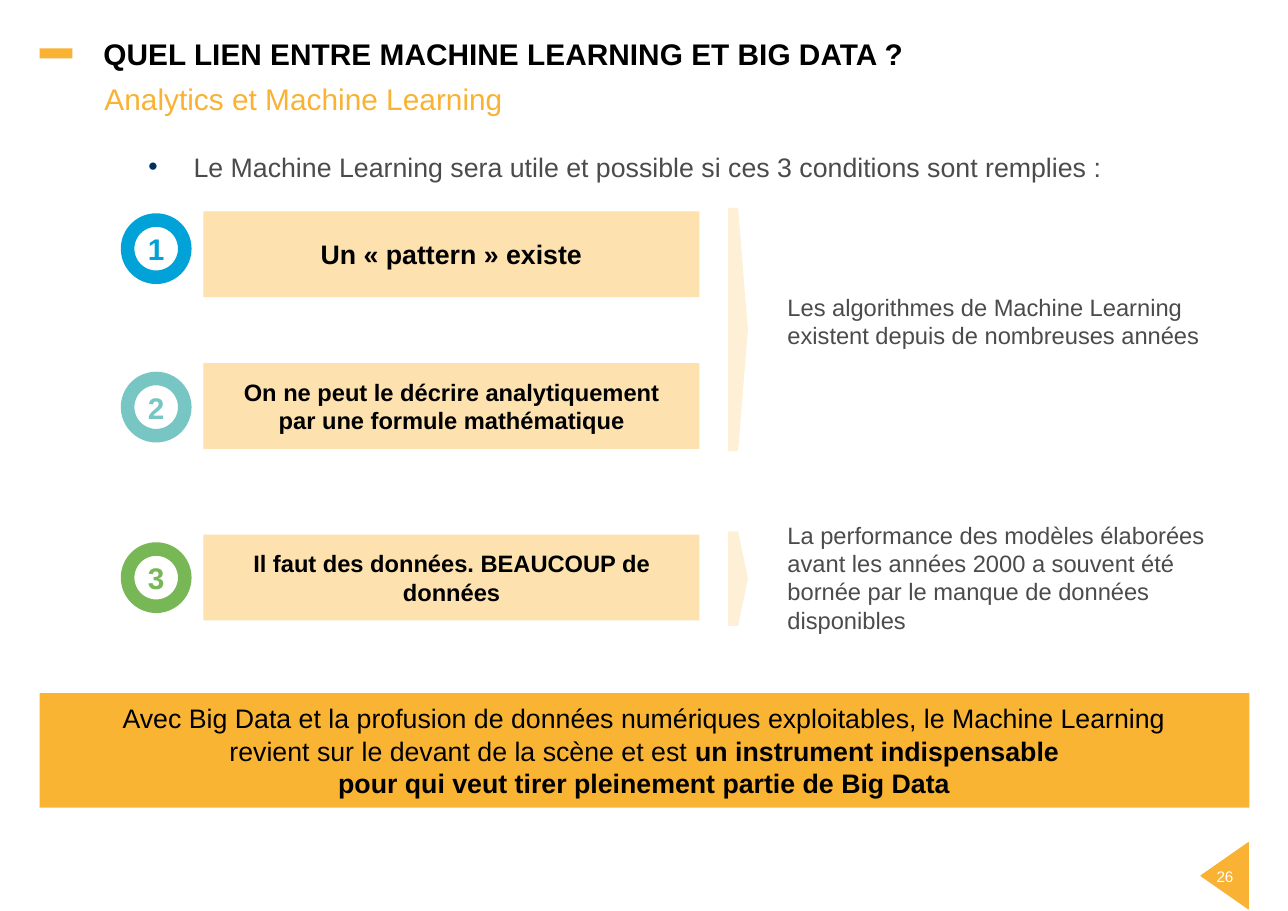
from lxml.etree import SubElement
from pptx import Presentation
from pptx.dml.color import RGBColor
from pptx.enum.shapes import MSO_SHAPE
from pptx.enum.text import MSO_ANCHOR, PP_ALIGN
from pptx.oxml.ns import qn
from pptx.util import Inches, Pt

COLORS = {
    "black": "000000", "white": "FFFFFF", "gray": "4B4B4B", "navy": "002D60",
    "amber": "F9B233", "banner": "FAB434", "sand": "FDE1AE", "cream": "FEF0D6",
    "blue": "00A2D8", "teal": "78C6C3", "green": "78B755",
}
TITLE = "QUEL LIEN ENTRE MACHINE LEARNING ET BIG DATA ?"
SUBTITLE = "Analytics et Machine Learning"
INTRO = "Le Machine Learning sera utile et possible si ces 3 conditions sont remplies :"
CONDITIONS = [
    {"text": "Un « pattern » existe", "size": 17.5, "color": "blue", "top": 1.92, "ring_top": 2},
    {"text": "On ne peut le décrire analytiquement par une formule mathématique",
     "size": 15.5, "color": "teal", "top": 3.3, "ring_top": 3.44},
    {"text": "Il faut des données. BEAUCOUP de données",
     "size": 15.5, "color": "green", "top": 4.86, "ring_top": 4.99},
]
REMARKS = [
    {"text": "Les algorithmes de Machine Learning existent depuis de nombreuses années",
     "top": 2.66, "height": 0.5, "arrow": (1.89, 4.1)},
    {"text": "La performance des modèles élaborées avant les années 2000 a souvent été "
             "bornée par le manque de données disponibles",
     "top": 4.73, "height": 1.01, "arrow": (4.83, 5.69)},
]
CONCLUSION = [
    [("Avec Big Data et la profusion de données numériques exploitables, le Machine Learning", False)],
    [("revient sur le devant de la scène et est ", False), ("un instrument indispensable", True)],
    [("pour qui veut tirer pleinement partie de Big Data", True)],
]
PAGE = "26"


def rgb(name):
    return RGBColor.from_string(COLORS[name])


def write(shape, content, size=15.5, color="black", bold=False, align=PP_ALIGN.LEFT,
          anchor=MSO_ANCHOR.TOP, inset=0, wrap=True, leading=None, bullet=None):
    """Fill a shape with a string or with paragraphs of (text, bold) runs."""
    frame = shape.text_frame
    frame.word_wrap = wrap
    frame.vertical_anchor = anchor
    frame.margin_left = frame.margin_right = Inches(inset)
    frame.margin_top = frame.margin_bottom = 0
    lines = [[(content, bold)]] if isinstance(content, str) else content
    for index, line in enumerate(lines):
        paragraph = frame.add_paragraph() if index else frame.paragraphs[0]
        if bullet:
            properties = paragraph._p.get_or_add_pPr()
            properties.set("marL", str(Inches(0.41)))
            properties.set("indent", str(-Inches(0.41)))
            tint = SubElement(properties, qn("a:buClr"))
            SubElement(tint, qn("a:srgbClr"), val=COLORS[bullet])
            SubElement(properties, qn("a:buFont"), typeface="Arial")
            SubElement(properties, qn("a:buChar"), char="•")
        paragraph.alignment = align
        if leading:
            paragraph.line_spacing = Pt(leading)
        for text, strong in line:
            run = paragraph.add_run()
            run.text = text
            run.font.name = "Arial"
            run.font.size = Pt(size)
            run.font.bold = strong
            run.font.color.rgb = rgb(color)


def paint(shape, fill=None, line=None, width=0.79):
    shape.shadow.inherit = False
    if fill:
        shape.fill.solid()
        shape.fill.fore_color.rgb = rgb(fill)
    else:
        shape.fill.background()
    if line:
        shape.line.color.rgb = rgb(line)
        shape.line.width = Pt(width)
    else:
        shape.line.fill.background()
    return shape


def place(slide, kind, box, **style):
    return paint(slide.shapes.add_shape(kind, *map(Inches, box)), **style)


def outline(slide, points, **style):
    corners = [(Inches(x), Inches(y)) for x, y in points]
    builder = slide.shapes.build_freeform(*corners[0])
    builder.add_line_segments(corners[1:], close=True)
    return paint(builder.convert_to_shape(), **style)


def label(slide, box, content, **style):
    write(slide.shapes.add_textbox(*map(Inches, box)), content, **style)


def main():
    deck = Presentation()
    deck.slide_width, deck.slide_height = Inches(11.71), Inches(8.28)
    slide = deck.slides.add_slide(deck.slide_layouts[6])
    centered = {"align": PP_ALIGN.CENTER, "anchor": MSO_ANCHOR.MIDDLE}

    place(slide, MSO_SHAPE.RECTANGLE, (0.36, 0.44, 0.3, 0.09), fill="amber")
    label(slide, (0.94, 0.32, 8.5, 0.32), TITLE, size=19.5, bold=True)
    label(slide, (0.95, 0.73, 8.5, 0.32), SUBTITLE, size=19.5, color="amber")
    label(slide, (1.35, 1.37, 9.2, 0.28), INTRO, size=17.5, color="gray", bullet="navy")

    for number, condition in enumerate(CONDITIONS, 1):
        panel = place(slide, MSO_SHAPE.RECTANGLE, (1.85, condition["top"], 4.51, 0.78), fill="sand")
        write(panel, condition["text"], size=condition["size"], bold=True, inset=0.33, **centered)
        ring = place(slide, MSO_SHAPE.OVAL, (1.16, condition["ring_top"], 0.52, 0.52),
                     line=condition["color"], width=8.86)
        write(ring, str(number), size=19.5, color=condition["color"], bold=True, wrap=False, **centered)

    for remark in REMARKS:
        top, bottom = remark["arrow"]
        outline(slide, [(6.62, top), (6.71, top), (6.8, (top + bottom) / 2), (6.71, bottom), (6.62, bottom)],
                fill="cream")
        label(slide, (7.16, remark["top"], 3.84, remark["height"]), remark["text"], color="gray")

    banner = place(slide, MSO_SHAPE.RECTANGLE, (0.36, 6.3, 11, 1.04), fill="banner")
    write(banner, CONCLUSION, size=17.5, leading=21, **centered)

    outline(slide, [(10.92, 7.96), (11.35, 8.26), (11.35, 7.66)], fill="amber", line="amber")
    label(slide, (11.06, 7.88, 0.22, 0.17), PAGE, size=10, color="white", wrap=False)
    deck.save("out.pptx")


if __name__ == "__main__":
    main()
